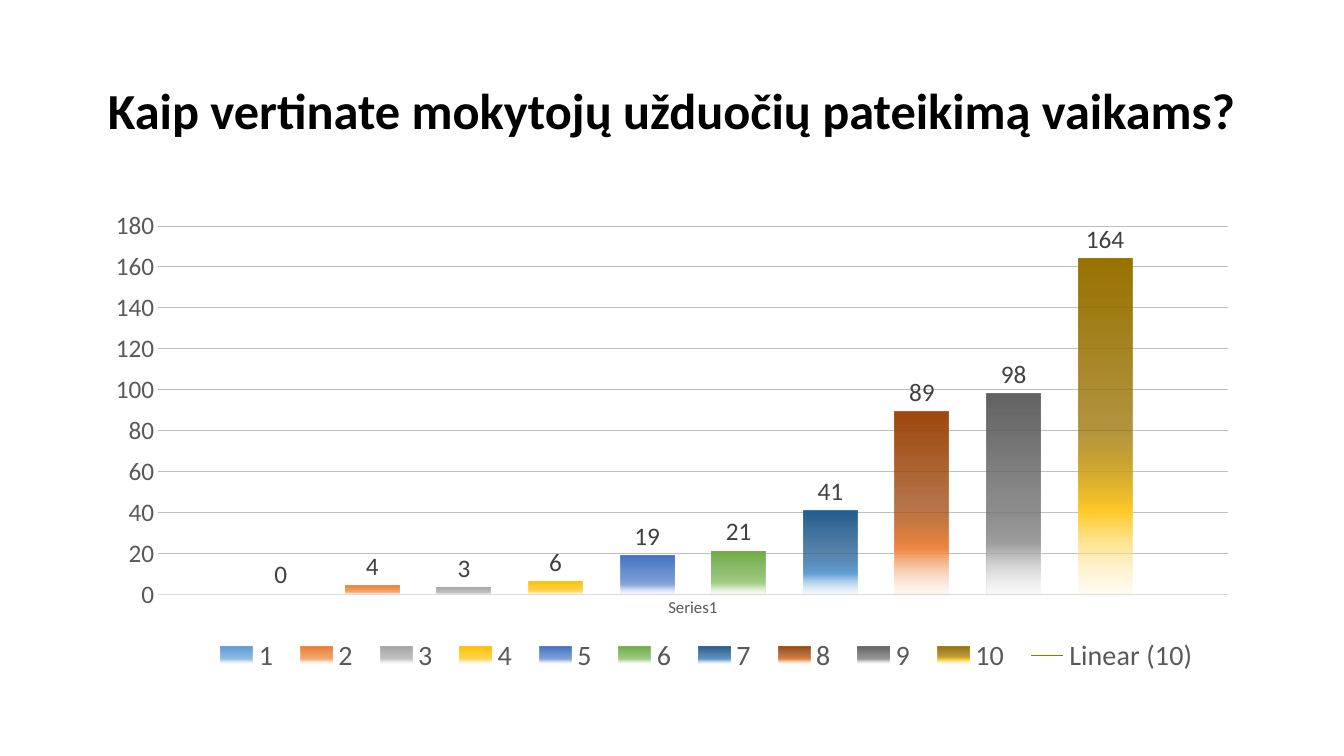
from lxml import etree
from pptx import Presentation
from pptx.chart.data import CategoryChartData
from pptx.dml.color import RGBColor
from pptx.enum.chart import XL_CHART_TYPE, XL_LABEL_POSITION, XL_LEGEND_POSITION, XL_TICK_MARK
from pptx.enum.text import MSO_ANCHOR, PP_ALIGN
from pptx.oxml import parse_xml
from pptx.oxml.ns import nsdecls, qn
from pptx.util import Pt

COLUMN = XL_CHART_TYPE.COLUMN_CLUSTERED
ABOVE = XL_LABEL_POSITION.OUTSIDE_END
BOTTOM = XL_LEGEND_POSITION.BOTTOM
NO_TICK = XL_TICK_MARK.NONE
CENTER = PP_ALIGN.CENTER
MIDDLE = MSO_ANCHOR.MIDDLE

FACE = "Calibri"
TITLE = "Kaip vertinate mokytojų užduočių pateikimą vaikams?"
GRAY = "595959"
WIDTH, HEIGHT = 828, 342.6
SCORES = [
    (0, "5B9BD5", "9DC3E6", "DEEBF7"),
    (4, "ED7D31", "F4B183", "FBE5D6"),
    (3, "A5A5A5", "C9C9C9", "EDEDED"),
    (6, "FFC000", "FFD966", "FFF2CC"),
    (19, "4472C4", "8FAADC", "DAE3F3"),
    (21, "70AD47", "A9D18E", "E2F0D9"),
    (41, "255E91", "63A0D7", "CBDFF2"),
    (89, "9E480E", "EF8944", "FAD8C1"),
    (98, "636363", "A1A1A1", "E0E0E0"),
    (164, "997300", "FFCA29", "FFEDB8"),
]


def color(code):
    """Turn a hex string into a colour."""
    return RGBColor.from_string(code)


def style(font, size, code, bold=False):
    """Set the face, size, colour and weight of a font."""
    font.name = FACE
    font.size = Pt(size)
    font.bold = bold
    font.color.rgb = color(code)


def stroke(line, code):
    """Give a line a thin solid colour."""
    line.color.rgb = color(code)
    line.width = Pt(0.75)


def add_title(slide):
    """Place and fill the title."""
    title = slide.shapes.title
    title.left, title.top = Pt(66), Pt(28.75)
    title.width, title.height = Pt(828), Pt(104.4)
    frame = title.text_frame
    frame.word_wrap = True
    frame.vertical_anchor = MIDDLE
    para = frame.paragraphs[0]
    para.alignment = CENTER
    para.line_spacing = 0.9
    run = para.add_run()
    run.text = TITLE
    style(run.font, 36, "000000", True)


def fade(series, dark, mid, pale):
    """Fill a series with a gradient that fades downwards."""
    fill = parse_xml(f'<a:gradFill {nsdecls("a")}><a:gsLst/><a:lin ang="5400000" scaled="0"/></a:gradFill>')
    stops = [(0, dark, 100), (51, dark, 75), (75, mid, 100), (100, pale, 15)]
    for place, code, alpha in stops:
        stop = etree.SubElement(fill[0], qn("a:gs"), pos=str(place * 1000))
        tone = etree.SubElement(stop, qn("a:srgbClr"), val=code)
        if alpha < 100:
            etree.SubElement(tone, qn("a:alpha"), val=str(alpha * 1000))
    series._element.get_or_add_spPr().append(fill)


def add_trend(series, code):
    """Add a linear trend line to a series."""
    trend = parse_xml(
        f'<c:trendline {nsdecls("c", "a")}><c:spPr><a:ln w="{Pt(0.75)}"><a:solidFill>'
        f'<a:srgbClr val="{code}"/></a:solidFill></a:ln></c:spPr>'
        '<c:trendlineType val="linear"/><c:dispRSqr val="0"/><c:dispEq val="0"/></c:trendline>'
    )
    series._element.find(qn("c:cat")).addprevious(trend)


def add_labels(series):
    """Show the values above the columns."""
    labels = series.data_labels
    labels.show_value = True
    labels.position = ABOVE
    style(labels.font, 18, "404040")


def format_axes(chart):
    """Format both axes and the grid."""
    for axis, size in ((chart.category_axis, 12), (chart.value_axis, 18)):
        axis.major_tick_mark = axis.minor_tick_mark = NO_TICK
        style(axis.tick_labels.font, size, GRAY)
    stroke(chart.category_axis.format.line, "D9D9D9")
    chart.value_axis.format.line.fill.background()
    chart.value_axis.has_major_gridlines = True
    stroke(chart.value_axis.major_gridlines.format.line, "BFBFBF")


def place(part, index, left, top, wide, high, inner=False):
    """Fix a part of the chart at a box given in points within it."""
    for old in part.findall(qn("c:layout")):
        part.remove(old)
    layout = parse_xml(f'<c:layout {nsdecls("c")}><c:manualLayout/></c:layout>')
    pairs = [("layoutTarget", "inner")] if inner else []
    pairs += [("xMode", "edge"), ("yMode", "edge")]
    pairs += [("x", left / WIDTH), ("y", top / HEIGHT), ("w", wide / WIDTH), ("h", high / HEIGHT)]
    for name, value in pairs:
        etree.SubElement(layout[0], qn(f"c:{name}"), val=str(value))
    part.insert(index, layout)


def add_legend(chart):
    """Put the legend on one line below the columns."""
    chart.has_legend = True
    legend = chart.legend
    legend.position = BOTTOM
    legend.include_in_layout = False
    style(legend.font, 20, GRAY)
    place(legend._element, 1, 79, 308, 720, 32)


def add_scores(slide):
    """Add the column chart of scores."""
    data = CategoryChartData()
    data.categories = ["Series1"]
    for mark, score in enumerate(SCORES, 1):
        data.add_series(str(mark), [score[0]])
    frame = slide.shapes.add_chart(COLUMN, Pt(66), Pt(144), Pt(WIDTH), Pt(HEIGHT), data)
    chart = frame.chart
    style(chart.font, 10, "000000")
    chart.has_title = False
    add_legend(chart)
    format_axes(chart)
    plot = chart.plots[0]
    plot.vary_by_categories = False
    plot.gap_width = 355
    plot.overlap = -70
    for series, (_, *tones) in zip(plot.series, SCORES):
        fade(series, *tones)
        add_labels(series)
    add_trend(plot.series[-1], SCORES[-1][1])
    place(plot._element.getparent(), 0, 47, 17.5, 764, 263, True)


def main():
    """Build and save the slide."""
    deck = Presentation()
    deck.slide_width, deck.slide_height = Pt(960), Pt(540)
    slide = deck.slides.add_slide(deck.slide_layouts[5])
    add_title(slide)
    add_scores(slide)
    deck.save("out.pptx")


if __name__ == "__main__":
    main()
